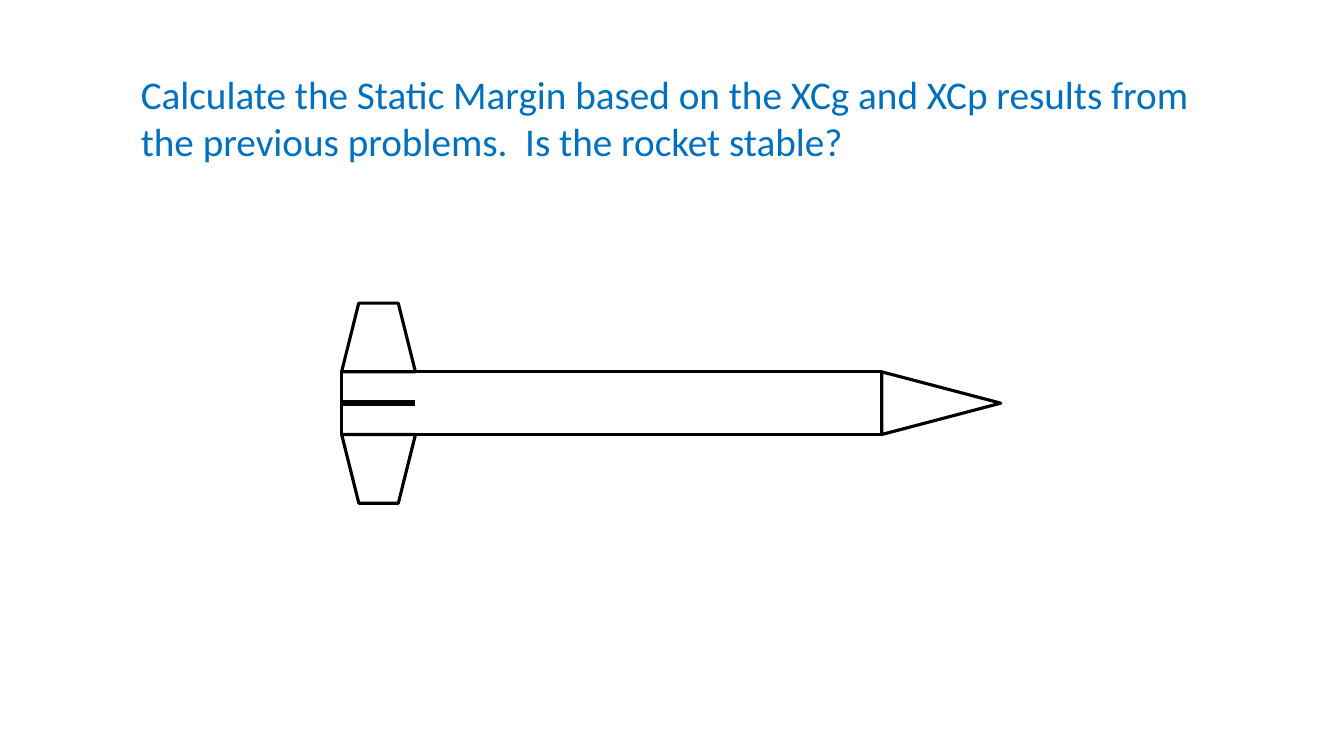
import pptx
import pptx.util
from pptx.dml.color import RGBColor
from pptx.enum.shapes import MSO_CONNECTOR, MSO_SHAPE
from pptx.oxml.ns import qn
from pptx.util import Cm
from lxml import etree

BLACK = RGBColor(0x00, 0x00, 0x00)
BLUE = RGBColor(0x00, 0x70, 0xC0)


def write_text(frame, text, font="Calibri", size=28, color=BLUE):
    frame.word_wrap = True
    run = frame.paragraphs[0].add_run()
    run.text = text
    run.font.name = font
    run.font.size = pptx.util.Pt(size)
    run.font.color.rgb = color


class RocketSlide:
    outline_width = 2.25
    outline_color = BLACK

    def __init__(self, slide):
        self.slide = slide
        self.rocket = slide.shapes.add_group_shape()

    def add_question(self, text, left, top, width, height):
        question = self.slide.shapes.add_textbox(Cm(left), Cm(top), Cm(width), Cm(height))
        write_text(question.text_frame, text)

    def add_section(self, preset, left, top, width, height, rotation=0):
        section = self.rocket.shapes.add_shape(
            preset, Cm(left), Cm(top), Cm(width), Cm(height))
        section.rotation = rotation
        section.shadow.inherit = False
        section.fill.background()
        section.line.color.rgb = self.outline_color
        section.line.width = pptx.util.Pt(self.outline_width)
        return section

    def add_edge_on_fin(self, body, left, middle, length):
        fin = self.rocket.shapes.add_connector(
            MSO_CONNECTOR.STRAIGHT, Cm(left), Cm(middle), Cm(left + length), Cm(middle))
        fin.begin_connect(body, 1)
        fin.line.color.rgb = self.outline_color
        fin.line.width = pptx.util.Pt(2 * self.outline_width)
        etree.SubElement(fin._element.spPr, qn("a:effectLst"))


def main():
    deck = pptx.Presentation()
    deck.slide_width, deck.slide_height = Cm(33.87), Cm(19.05)
    page = RocketSlide(deck.slides.add_slide(deck.slide_layouts[6]))

    tail, axis = 8.61, 10.16
    body_length, diameter = 13.61, 1.58
    nose_length = 3
    fin_root, fin_span = 1.86, 1.73
    radius = diameter / 2
    nose_middle = tail + body_length + nose_length / 2

    body = page.add_section(MSO_SHAPE.RECTANGLE, tail, axis - radius, body_length, diameter)
    page.add_section(MSO_SHAPE.ISOSCELES_TRIANGLE, nose_middle - radius,
                     axis - nose_length / 2, diameter, nose_length, rotation=90)
    for fin_top, rotation in ((axis - radius - fin_span, 0), (axis + radius, 180)):
        page.add_section(MSO_SHAPE.TRAPEZOID, tail, fin_top, fin_root, fin_span, rotation)
    page.add_edge_on_fin(body, tail, axis, fin_root)

    page.add_question("Calculate the Static Margin based on the XCg and XCp results from "
                      "the previous problems.  Is the rocket stable?", 3.3, 1.65, 27.25, 2.64)
    deck.save("out.pptx")


if __name__ == "__main__":
    main()
